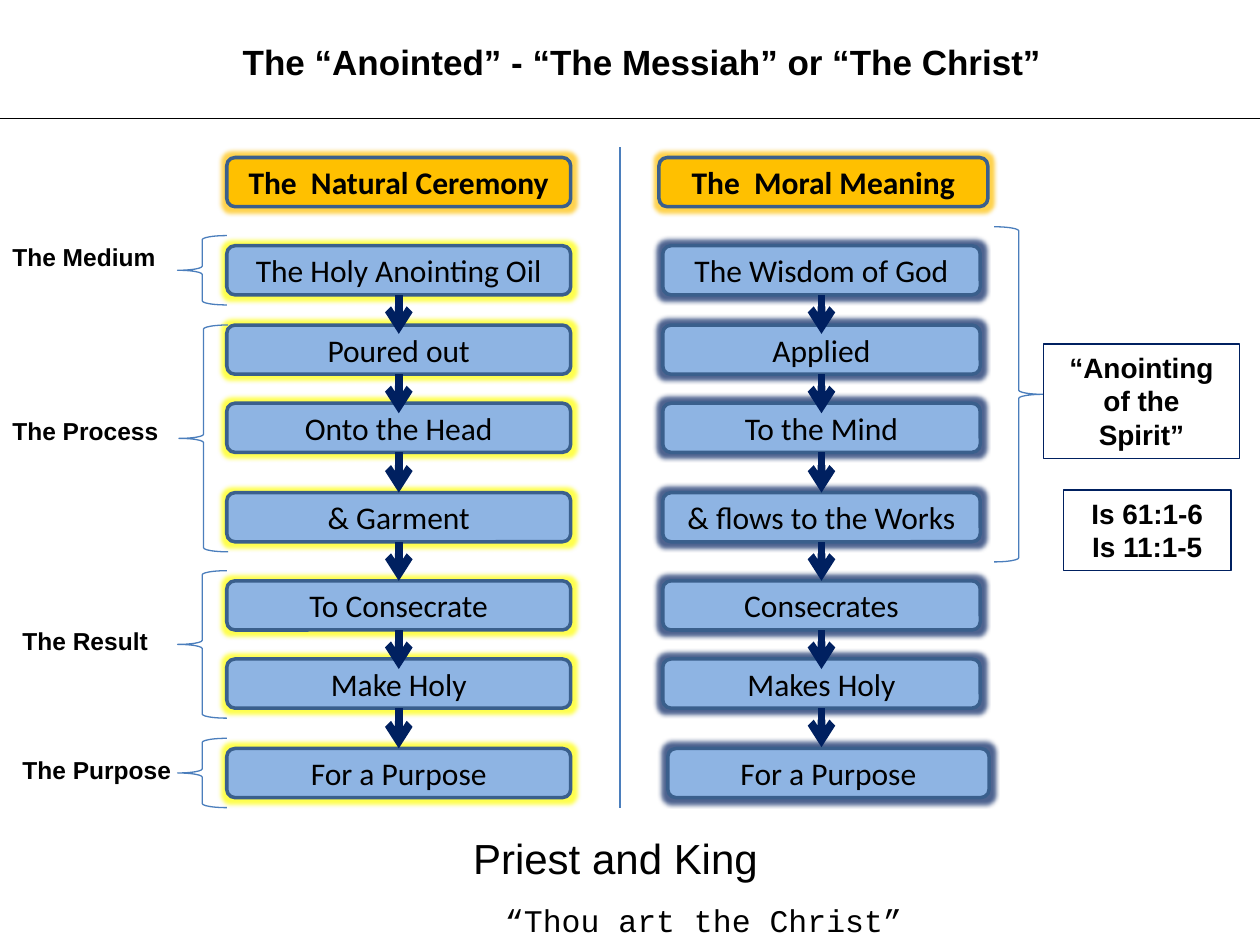
from itertools import pairwise
from typing import NamedTuple, Optional

from pptx import Presentation, util as u
from pptx.dml.color import RGBColor
from pptx.enum import shapes, text
from pptx.oxml import ns
from lxml import etree

PX = 9144
BLACK, NAVY, BLUE = "000000", "002060", "4B7EBC"
BOX_FILL, HEAD_FILL, BOX_LINE = "8EB4E3", "FFC000", "3A5F8C"
BOX_H, ARROW_H = 39, 31
ROW_TOPS = [195, 258, 320, 391, 461, 523, 594]
LEFT, CENTER = text.PP_ALIGN.LEFT, text.PP_ALIGN.CENTER
SHAPE = shapes.MSO_SHAPE


class Rect(NamedTuple):
    x: int
    y: int
    w: int
    h: int


class Font(NamedTuple):
    size: int
    bold: bool = False
    name: str = "Arial"


class Column(NamedTuple):
    heading: str
    head: Rect
    glow: str
    steps: list[str]
    spans: list[tuple[int, int]]


class Label(NamedTuple):
    words: str
    rect: Rect
    font: Font
    align: text.PP_ALIGN = LEFT
    wrap: bool = True


COLUMNS = [
    Column("The  Natural Ceremony", Rect(180, 125, 273, BOX_H), "FFFF00",
           ["The Holy Anointing Oil", "Poured out", "Onto the Head", "& Garment",
            "To Consecrate", "Make Holy", "For a Purpose"],
           [(180, 273)] * 7),
    Column("The  Moral Meaning", Rect(523, 125, 261, BOX_H), NAVY,
           ["The Wisdom of God", "Applied", "To the Mind", "& flows to the Works",
            "Consecrates", "Makes Holy", "For a Purpose"],
           [(526, 252)] * 6 + [(530, 255)]),
]
SIDE = Font(14, True)
LABELS = [
    Label("The “Anointed” - “The Messiah” or “The Christ” ",
          Rect(180, 27, 667, 44), Font(20, True), CENTER, False),
    Label("The Medium", Rect(0, 187, 164, 34), SIDE),
    Label("The Process", Rect(0, 325, 164, 34), SIDE),
    Label("The Result", Rect(8, 492, 164, 34), SIDE),
    Label("The Purpose", Rect(8, 594, 164, 34), SIDE),
    Label("Priest and King", Rect(305, 656, 367, 50), Font(24), CENTER),
    Label("“Thou art the Christ”", Rect(391, 710, 500, 40), Font(18, name="Courier New")),
]
BRACES = [
    (SHAPE.LEFT_BRACE, Rect(141, 187, 39, 55)),
    (SHAPE.LEFT_BRACE, Rect(142, 258, 39, 180)),
    (SHAPE.LEFT_BRACE, Rect(141, 453, 39, 117)),
    (SHAPE.LEFT_BRACE, Rect(141, 586, 39, 55)),
    (SHAPE.RIGHT_BRACE, Rect(789, 180, 39, 266)),
]
NOTES = [
    (["“Anointing of the", "Spirit”"], Rect(828, 273, 156, 91)),
    (["Is 61:1-6", "Is 11:1-5"], Rect(844, 389, 133, 64)),
]


def emu(*px: float) -> list[int]:
    return [round(v * PX) for v in px]


def rgb(value: str) -> RGBColor:
    return RGBColor.from_string(value)


def write(tf, lines: list[str], font: Font, align: text.PP_ALIGN) -> None:
    for i, line in enumerate(lines):
        p = tf.add_paragraph() if i else tf.paragraphs[0]
        p.text, p.alignment = line, align
        p.font.size, p.font.bold, p.font.name = u.Pt(font.size), font.bold, font.name
        p.font.color.rgb = rgb(BLACK)


def add_shape(s, kind, rect: Rect, line: str, width: float = 0.75,
              fill: Optional[str] = None):
    sp = s.shapes.add_shape(kind, *emu(*rect))
    sp.shadow.inherit = False
    if fill:
        sp.fill.solid()
        sp.fill.fore_color.rgb = rgb(fill)
    else:
        sp.fill.background()
    sp.line.color.rgb, sp.line.width = rgb(line), u.Pt(width)
    return sp


def add_box(s, words: str, rect: Rect, fill: str, glow: str, bold: bool = False):
    sp = add_shape(s, SHAPE.ROUNDED_RECTANGLE, rect, BOX_LINE, 2, fill)
    effects = sp._element.spPr.find(ns.qn("a:effectLst"))
    halo = etree.SubElement(effects, ns.qn("a:glow"), rad=str(u.Pt(5)))
    color = etree.SubElement(halo, ns.qn("a:srgbClr"), val=glow)
    etree.SubElement(color, ns.qn("a:alpha"), val="70000")
    sp.text_frame.vertical_anchor = text.MSO_ANCHOR.MIDDLE
    write(sp.text_frame, [words], Font(18, bold, "Calibri"), CENTER)
    return sp


def add_line(s, x1: float, y1: float, x2: float, y2: float, color: str,
             width: float = 0.75):
    c = s.shapes.add_connector(shapes.MSO_CONNECTOR.STRAIGHT, *emu(x1, y1, x2, y2))
    c.line.color.rgb, c.line.width = rgb(color), u.Pt(width)
    etree.SubElement(c._element.spPr, ns.qn("a:effectLst"))
    return c


def add_column(s, col: Column) -> None:
    add_box(s, col.heading, col.head, HEAD_FILL, HEAD_FILL, True)
    rects = [Rect(x, y, w, BOX_H) for (x, w), y in zip(col.spans, ROW_TOPS)]
    boxes = [add_box(s, words, r, BOX_FILL, col.glow)
             for words, r in zip(col.steps, rects)]
    for (a, box), (b, below) in pairwise(list(zip(rects, boxes))):
        x, y = a.x + a.w / 2, a.y + a.h
        c = add_line(s, x, y, x, y + ARROW_H, NAVY, 4.5)
        etree.SubElement(c.line._get_or_add_ln(), ns.qn("a:tailEnd"), type="arrow")
        c.begin_connect(box, 2)
        if b.x == a.x and abs(b.y - y - ARROW_H) <= 1:
            c.end_connect(below, 0)


def add_label(s, label: Label) -> None:
    tf = s.shapes.add_textbox(*emu(*label.rect)).text_frame
    tf.word_wrap = label.wrap
    write(tf, [label.words], label.font, label.align)


def add_note(s, lines: list[str], rect: Rect) -> None:
    tf = add_shape(s, SHAPE.RECTANGLE, rect, NAVY).text_frame
    tf.word_wrap, tf.vertical_anchor = True, text.MSO_ANCHOR.TOP
    write(tf, lines, Font(16, True), CENTER)


def main() -> None:
    prs = Presentation()
    prs.slide_width, prs.slide_height = emu(1000, 750)
    s = prs.slides.add_slide(prs.slide_layouts[6])
    add_line(s, 0, 94, 1000, 94, BLACK)
    add_line(s, 492, 117, 492, 641, BLUE)
    for col in COLUMNS:
        add_column(s, col)
    for kind, rect in BRACES:
        add_shape(s, kind, rect, BLUE)
    for label in LABELS:
        add_label(s, label)
    for lines, rect in NOTES:
        add_note(s, lines, rect)
    prs.save("out.pptx")


if __name__ == "__main__":
    main()
